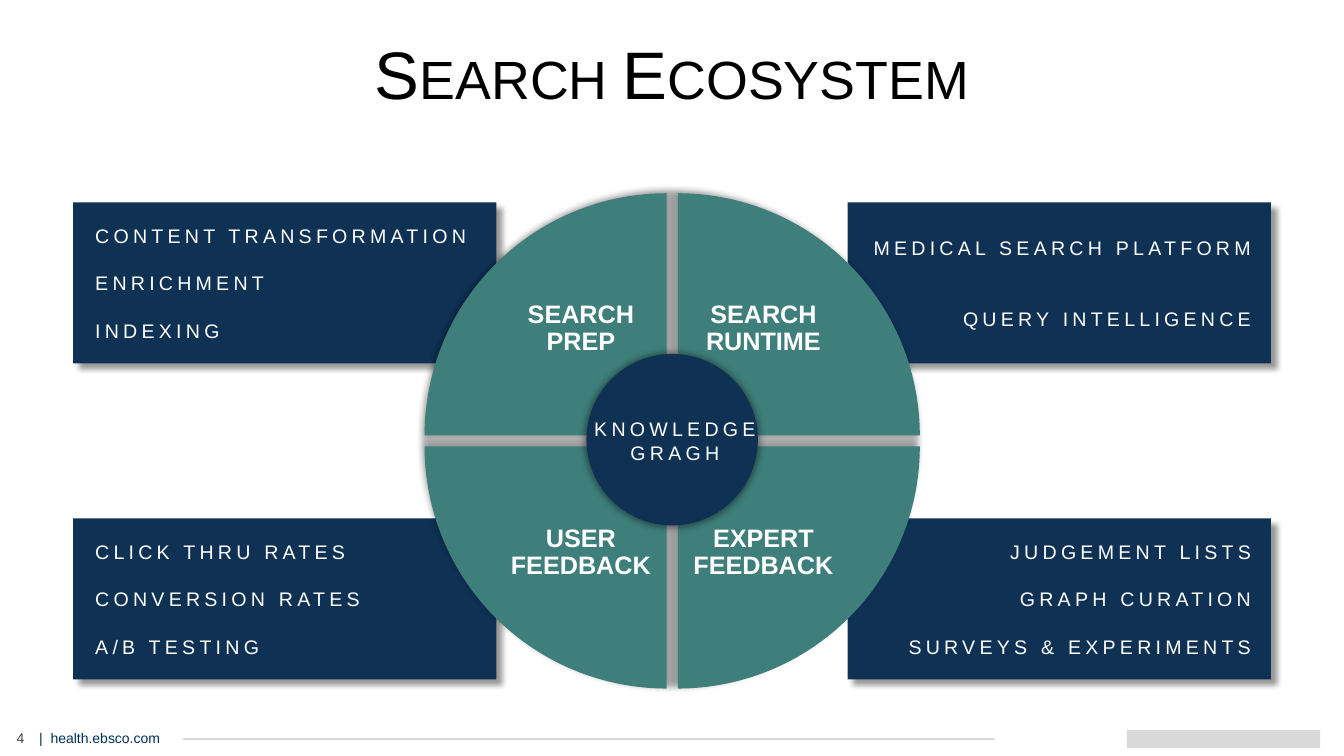
from dataclasses import dataclass

from lxml import etree
from pptx import Presentation
from pptx.dml.color import RGBColor
from pptx.enum.shapes import MSO_CONNECTOR, MSO_SHAPE
from pptx.enum.text import MSO_ANCHOR, MSO_AUTO_SIZE, PP_ALIGN
from pptx.oxml.ns import qn
from pptx.util import Cm, Pt

LEFT, CENTER, RIGHT = PP_ALIGN.LEFT, PP_ALIGN.CENTER, PP_ALIGN.RIGHT
TOP, MIDDLE = MSO_ANCHOR.TOP, MSO_ANCHOR.MIDDLE
WEDGE, CIRCLE, RECTANGLE = MSO_SHAPE.PIE_WEDGE, MSO_SHAPE.OVAL, MSO_SHAPE.RECTANGLE
STRAIGHT = MSO_CONNECTOR.STRAIGHT
FIXED = MSO_AUTO_SIZE.NONE

COLORS = {
    "navy": "0E3154", "teal": "3E7F7B", "white": "FFFFFF", "black": "000000",
    "site": "002F56", "number": "454545", "rule": "D9D9D9",
}

# Wheel geometry in cm
WHEEL_X, WHEEL_Y = 10.7, 4.87
WEDGE_SIZE, WEDGE_STEP = 6.1, 6.38
LABEL_SIZE, LABEL_Y, LABEL_STEP = 4.32, 6.13, 5.64
HUB_X, HUB_Y, HUB_SIZE = 14.78, 8.92, 4.32
PANEL_W, PANEL_H = 10.67, 4.06


@dataclass(frozen=True)
class Style:
    size: float
    color: str
    bold: bool = False
    spacing: int = 0
    small_caps: bool = False
    font: str = "Arial"


@dataclass(frozen=True)
class Panel:
    x: float
    y: float
    align: PP_ALIGN
    gap: float
    lines: tuple[str, ...]


@dataclass(frozen=True)
class Quadrant:
    col: int
    row: int
    rotation: int
    label: str


TITLE = Style(48, "black", small_caps=True)
ITEM = Style(14, "white", spacing=300)
LABEL = Style(18, "white", bold=True)

PANELS = [
    Panel(1.84, 5.1, LEFT, 17, ("CONTENT TRANSFORMATION", "ENRICHMENT", "INDEXING")),
    Panel(21.36, 5.1, RIGHT, 34, ("MEDICAL SEARCH PLATFORM", "QUERY INTELLIGENCE")),
    Panel(1.84, 13.06, LEFT, 17, ("CLICK THRU RATES", "CONVERSION RATES", "A/B TESTING")),
    Panel(21.36, 13.06, RIGHT, 17,
          ("JUDGEMENT LISTS", "GRAPH CURATION", "SURVEYS & EXPERIMENTS")),
]
QUADRANTS = [
    Quadrant(1, 1, 180, "EXPERT FEEDBACK"),
    Quadrant(1, 0, 90, "SEARCH RUNTIME"),
    Quadrant(0, 1, 270, "USER FEEDBACK"),
    Quadrant(0, 0, 0, "SEARCH PREP"),
]


def rgb(name: str) -> RGBColor:
    return RGBColor.from_string(COLORS[name])


def place(s, x: float, y: float, w: float, h: float) -> None:
    s.left, s.top, s.width, s.height = Cm(x), Cm(y), Cm(w), Cm(h)


def paint(s, color: str) -> None:
    s.fill.solid()
    s.fill.fore_color.rgb = rgb(color)
    s.line.fill.background()
    s.shadow.inherit = False


def cast_shadow(s, blur: float, distance: float = 0, angle: int = 0,
                scale: int = 100) -> None:
    effects = s._element.spPr.find(qn("a:effectLst"))
    shadow = etree.SubElement(
        effects, qn("a:outerShdw"), blurRad=str(Pt(blur)), dist=str(Pt(distance)),
        dir=str(angle * 60000), sx=str(scale * 1000), sy=str(scale * 1000),
        algn="ctr", rotWithShape="0")
    tone = etree.SubElement(shadow, qn("a:srgbClr"), val=COLORS["black"])
    etree.SubElement(tone, qn("a:alpha"), val="40000")


def write(s, lines: tuple[str, ...], style: Style, align: PP_ALIGN = LEFT,
          anchor: MSO_ANCHOR = TOP, gap: float = 0, leading: float = 1.0,
          insets: tuple[float, ...] = (0.25, 0.13, 0.25, 0.13), wrap: bool = True) -> None:
    tf = s.text_frame
    tf.auto_size, tf.word_wrap, tf.vertical_anchor = FIXED, wrap, anchor
    tf.margin_left, tf.margin_top, tf.margin_right, tf.margin_bottom = map(Cm, insets)
    for i, line in enumerate(lines):
        p = tf.add_paragraph() if i else tf.paragraphs[0]
        pPr = p._p.get_or_add_pPr()
        pPr.set("marL", "0")
        pPr.set("indent", "0")
        etree.SubElement(pPr, qn("a:buNone"))
        p.alignment, p.line_spacing = align, leading
        p.space_before, p.space_after = Pt(gap if i else 0), Pt(0)
        r = p.add_run()
        r.text = line
        r.font.name, r.font.size, r.font.bold = style.font, Pt(style.size), style.bold
        r.font.color.rgb = rgb(style.color)
        rPr = r._r.get_or_add_rPr()
        if style.spacing:
            rPr.set("spc", str(style.spacing))
        if style.small_caps:
            rPr.set("cap", "small")


def add_text(slide, x: float, y: float, w: float, h: float, lines: tuple[str, ...],
             style: Style, **options) -> None:
    write(slide.shapes.add_textbox(Cm(x), Cm(y), Cm(w), Cm(h)), lines, style, **options)


def add_solid(slide, kind: MSO_SHAPE, x: float, y: float, w: float, h: float, color: str):
    s = slide.shapes.add_shape(kind, Cm(x), Cm(y), Cm(w), Cm(h))
    paint(s, color)
    return s


def add_panel(sp, panel: Panel) -> None:
    place(sp, panel.x, panel.y, PANEL_W, PANEL_H)
    paint(sp, "navy")
    cast_shadow(sp, blur=4, distance=6, angle=45)
    write(sp, panel.lines, ITEM, panel.align, MIDDLE, panel.gap,
          insets=(0.56, 0.38, 0.5, 0.38))


def add_quadrant(slide, q: Quadrant) -> None:
    x, y = WHEEL_X + q.col * WEDGE_STEP, WHEEL_Y + q.row * WEDGE_STEP
    wedge = add_solid(slide, WEDGE, x, y, WEDGE_SIZE, WEDGE_SIZE, "teal")
    wedge.rotation = q.rotation
    cast_shadow(wedge, blur=5, scale=102)
    label_x = x if q.col else x + WEDGE_SIZE - LABEL_SIZE
    add_text(slide, label_x, LABEL_Y + q.row * LABEL_STEP, LABEL_SIZE, LABEL_SIZE,
             (q.label,), LABEL, align=CENTER, anchor=MIDDLE, leading=0.9, insets=(0.36,) * 4)


def add_footer(slide) -> None:
    add_text(slide, 0.74, 18.26, 4.93, 0.69, ("|  health.ebsco.com",), Style(10, "site"))
    add_text(slide, -0.1, 18.26, 1.24, 0.69, ("4",), Style(10, "number"),
             align=CENTER, anchor=MIDDLE)
    rule = slide.shapes.add_connector(STRAIGHT, Cm(4.62), Cm(18.62), Cm(25.07), Cm(18.62))
    rule.line.color.rgb = rgb("rule")
    rule.line.width = Pt(1)
    etree.SubElement(rule._element.spPr, qn("a:effectLst"))
    add_solid(slide, RECTANGLE, 28.4, 18.4, 4.87, 0.45, "rule")


def main() -> None:
    prs = Presentation()
    prs.slide_width, prs.slide_height = Cm(33.87), Cm(19.05)
    slide = prs.slides.add_slide(prs.slide_layouts.get_by_name("Comparison"))
    title, *bodies = slide.placeholders

    # Title
    place(title, 0, 1, 33.87, 1.75)
    write(title, ("Search Ecosystem",), TITLE, CENTER, leading=0.85)

    # Corner panels
    for sp, panel in zip(bodies, PANELS):
        add_panel(sp, panel)

    # Wheel and hub
    for quadrant in QUADRANTS:
        add_quadrant(slide, quadrant)
    hub = add_solid(slide, CIRCLE, HUB_X, HUB_Y, HUB_SIZE, HUB_SIZE, "navy")
    cast_shadow(hub, blur=5, scale=102)
    add_text(slide, 14.65, 10.38, 4.72, 1.45, ("KNOWLEDGE", "GRAGH"), ITEM,
             align=CENTER, wrap=False)

    add_footer(slide)
    prs.save("out.pptx")


if __name__ == "__main__":
    main()
